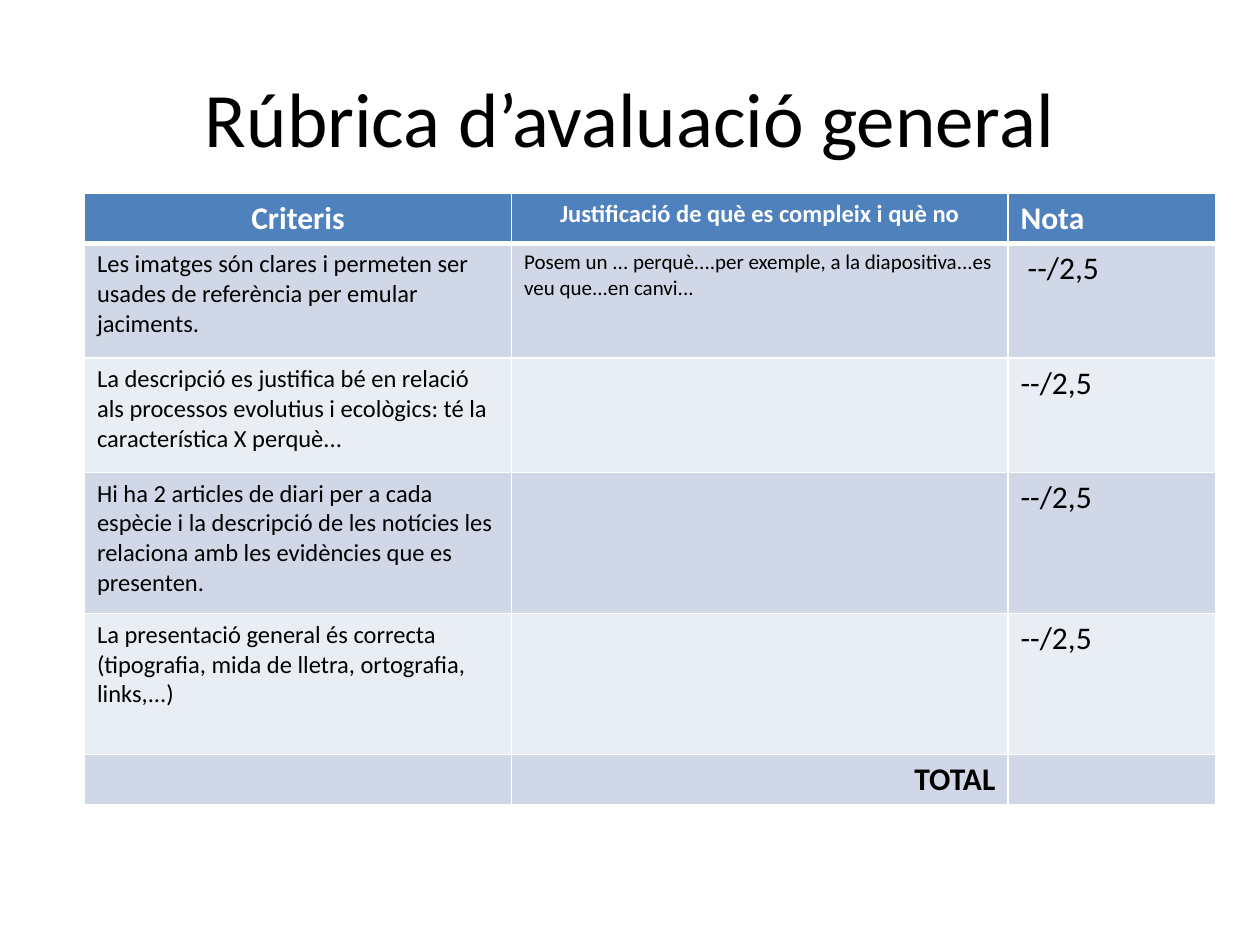
from lxml.etree import SubElement
from pptx import Presentation
from pptx.dml.color import RGBColor
from pptx.enum.text import MSO_ANCHOR, PP_ALIGN
from pptx.oxml.ns import qn
from pptx.util import Inches, Pt

BLACK = RGBColor(0x00, 0x00, 0x00)
WHITE = RGBColor(0xFF, 0xFF, 0xFF)
HEADER_BLUE = RGBColor(0x4F, 0x81, 0xBD)
BANDS = (RGBColor(0xD0, 0xD8, 0xE8), RGBColor(0xE9, 0xED, 0xF4))

COL_WIDTHS = (3.39, 3.94, 1.65)
ROW_HEIGHTS = (0.4, 0.91, 0.91, 1.12, 1.12, 0.4)

HEADERS = (
    ("Criteris", 18, PP_ALIGN.CENTER),
    ("Justificació de què es compleix i què no", 14, PP_ALIGN.CENTER),
    ("Nota", 18, PP_ALIGN.LEFT),
)
CRITERIA = (
    ("Les imatges són clares i permeten ser usades de referència per emular jaciments.",
     "Posem un ... perquè....per exemple, a la diapositiva...es veu que...en canvi...",
     " --/2,5"),
    ("La descripció es justifica bé en relació als processos evolutius i ecològics: "
     "té la característica X perquè...", "", "--/2,5"),
    ("Hi ha 2 articles de diari per a cada espècie i la descripció de les notícies "
     "les relaciona amb les evidències que es presenten.", "", "--/2,5"),
    ("La presentació general és correcta (tipografia, mida de lletra, ortografia, "
     "links,...)", "", "--/2,5"),
)
CRITERIA_SIZES = (14, 12, 18)


def write_text(tf, text, size=18, color=BLACK, bold=False, align=PP_ALIGN.LEFT, font="Calibri"):
    p = tf.paragraphs[0]
    p.alignment = align
    if not text:
        p.font.size = Pt(size)
        return
    r = p.add_run()
    r.text = text
    r.font.name = font
    r.font.size = Pt(size)
    r.font.bold = bold
    r.font.color.rgb = color


def set_borders(cell, bottom=1):
    """Draw white cell borders; widths are in points."""
    tc_pr = cell._tc.get_or_add_tcPr()
    for side, width in (("L", 1), ("R", 1), ("T", 1), ("B", bottom)):
        ln = SubElement(tc_pr, qn(f"a:ln{side}"), w=str(Pt(width)))
        fill = SubElement(ln, qn("a:solidFill"))
        SubElement(fill, qn("a:srgbClr"), val=str(WHITE))


class RubricSlide:
    def __init__(self, prs):
        self.font = "Calibri"
        self.s = prs.slides.add_slide(prs.slide_layouts[6])

    def title(self, text, left, top, width, height):
        sp = self.s.shapes.add_textbox(Inches(left), Inches(top), Inches(width), Inches(height))
        tf = sp.text_frame
        tf.word_wrap = True
        tf.vertical_anchor = MSO_ANCHOR.MIDDLE
        write_text(tf, text, size=44, align=PP_ALIGN.CENTER, font=self.font)

    def table(self, left, top, col_widths, row_heights):
        table = self.s.shapes.add_table(
            len(row_heights), len(col_widths), Inches(left), Inches(top),
            Inches(sum(col_widths)), Inches(sum(row_heights))).table
        for column, width in zip(table.columns, col_widths):
            column.width = Inches(width)
        for row, height in zip(table.rows, row_heights):
            row.height = Inches(height)
        return table

    def cell(self, cell, text, fill, bottom=1, **text_format):
        set_borders(cell, bottom)
        cell.fill.solid()
        cell.fill.fore_color.rgb = fill
        write_text(cell.text_frame, text, font=self.font, **text_format)


def main():
    prs = Presentation()
    prs.slide_width, prs.slide_height = Inches(10), Inches(7.5)
    slide = RubricSlide(prs)
    slide.title("Rúbrica d’avaluació general", 0.5, 0.3, 9, 1.25)
    table = slide.table(0.67, 1.53, COL_WIDTHS, ROW_HEIGHTS)

    for col, (text, size, align) in enumerate(HEADERS):
        slide.cell(table.cell(0, col), text, HEADER_BLUE, bottom=3,
                   size=size, color=WHITE, bold=True, align=align)
    for row, texts in enumerate(CRITERIA, start=1):
        for col, (text, size) in enumerate(zip(texts, CRITERIA_SIZES)):
            slide.cell(table.cell(row, col), text, BANDS[(row - 1) % 2], size=size)
    for col, text in enumerate(("", "TOTAL", "")):
        slide.cell(table.cell(len(CRITERIA) + 1, col), text, BANDS[0],
                   bold=True, align=PP_ALIGN.RIGHT)

    prs.save("out.pptx")


if __name__ == "__main__":
    main()
